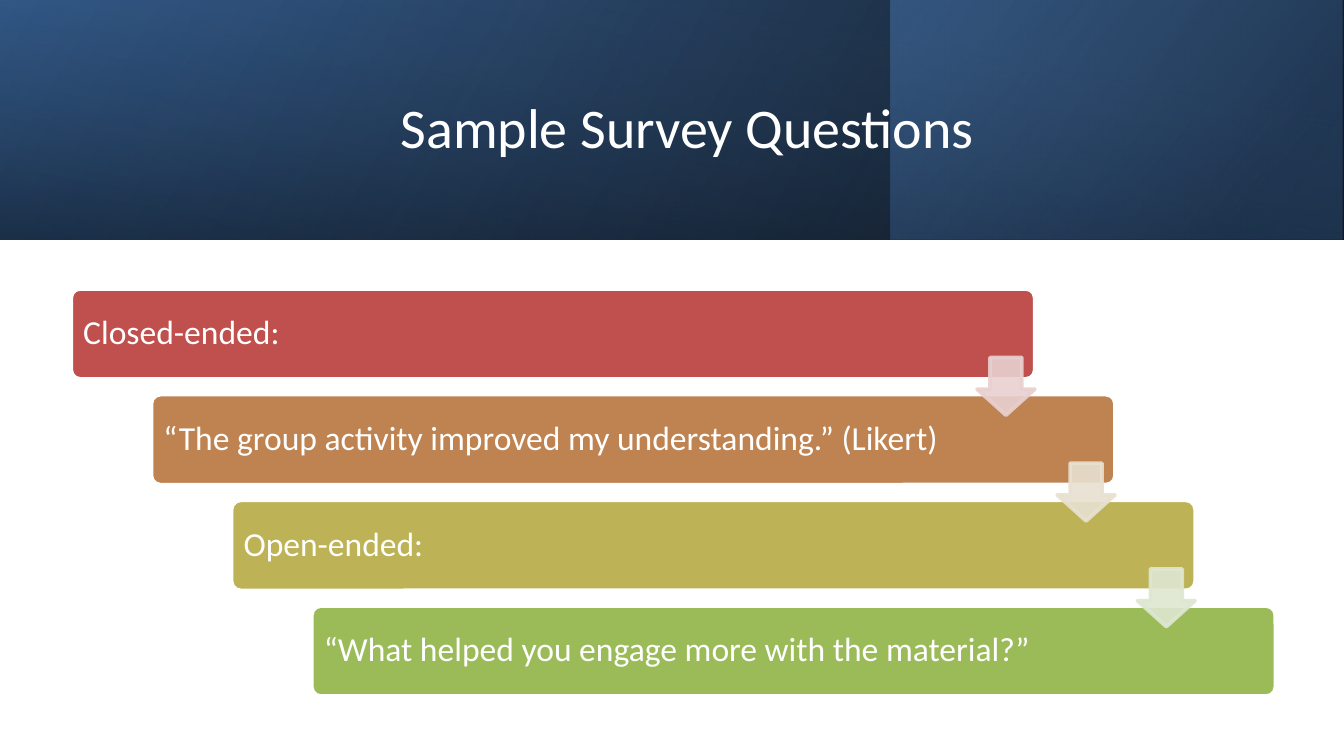
"""Build the survey questions slide: a gradient header above four staggered steps."""
from lxml import etree
from pptx import Presentation
from pptx.dml.color import RGBColor as RGB
from pptx.enum.shapes import MSO_SHAPE as SHAPE
from pptx.enum.text import MSO_ANCHOR as ANCHOR, PP_ALIGN as ALIGN
from pptx.oxml import parse_xml
from pptx.oxml.ns import nsdecls, qn
from pptx.util import Inches, Pt

THEME = {
    "font": "Calibri", "title_size": Pt(30), "step_size": Pt(18), "line": Pt(2),
    "white": "FFFFFF", "black": "000000",
    "navy": "254061", "blue": "376092", "sky": "4F81BD",
    "steps": ["C0504D", "BE8351", "BDB255", "9BBB59"],
    "arrows": ["E8D0D0", "E8E1D1", "DEE7D1"],
}
HEADER = [
    ((0, 0, 10, 1.78), 0, 330, [(0, "black", 96), (100, "blue", 100)]),
    ((6.63, 0, 3.36, 1.78), 0, 320, [(19, "navy", 68), (100, "sky", 48)]),
    ((4.11, -4.11, 1.78, 10), 270, 350, [(23, "blue", 16), (99, "black", 45)]),
]
STEPS = [
    "Closed-ended:",
    "“The group activity improved my understanding.” (Likert)",
    "Open-ended:",
    "“What helped you engage more with the material?”",
]
STEP_X, STEP_Y = 1.79 / 3, 2.36 / 3


def add_shape(kind, box, color, line_color=None):
    sp = s.shapes.add_shape(kind, *map(Inches, box))
    sp.shadow.inherit = False
    sp.fill.solid()
    sp.fill.fore_color.rgb = RGB.from_string(color)
    if line_color:
        sp.line.color.rgb = RGB.from_string(line_color)
        sp.line.width = THEME["line"]
    else:
        sp.line.fill.background()
    return sp


def set_text(sp, text, size, align, inset, spacing):
    tf = sp.text_frame
    tf.text = text
    frame = {"word_wrap": True, "vertical_anchor": ANCHOR.MIDDLE,
             "margin_left": inset, "margin_right": inset}
    for name, value in frame.items():
        setattr(tf, name, value)
    p = tf.paragraphs[0]
    p.alignment, p.line_spacing = align, spacing
    font = p.runs[0].font
    for name, value in {"name": THEME["font"], "size": size}.items():
        setattr(font, name, value)
    font.color.rgb = RGB.from_string(THEME["white"])


prs = Presentation()
prs.slide_width = Inches(10)
prs.slide_height = prs.slide_width * 9 // 16
s = prs.slides.add_slide(prs.slide_layouts[5])

for box, rotation, angle, stops in HEADER:
    sp = add_shape(SHAPE.RECTANGLE, box, THEME["blue"])
    sp.rotation = rotation
    props = sp._element.spPr
    props.find(qn("a:xfrm")).set("flipH", "1")
    gs = "".join(
        f'<a:gs pos="{pos * 1000}"><a:srgbClr val="{THEME[color]}">'
        f'<a:alpha val="{alpha * 1000}"/></a:srgbClr></a:gs>'
        for pos, color, alpha in stops)
    gradient = parse_xml(
        f'<a:gradFill {nsdecls("a")}><a:gsLst>{gs}</a:gsLst>'
        f'<a:lin ang="{angle * 60000}" scaled="0"/></a:gradFill>')
    props.replace(props.find(qn("a:solidFill")), gradient)

title = s.shapes.title
title.left, title.top, title.width, title.height = map(Inches, (1.13, 0.29, 7.97, 1.29))
set_text(title, "Sample Survey Questions", THEME["title_size"], ALIGN.CENTER, Inches(0.1), 1.0)
s.shapes._spTree.append(title._element)

for i, (text, color) in enumerate(zip(STEPS, THEME["steps"])):
    box = (0.53 + i * STEP_X, 2.15 + i * STEP_Y, 7.17, 0.67)
    sp = add_shape(SHAPE.ROUNDED_RECTANGLE, box, color, THEME["white"])
    sp.adjustments[0] = 0.1
    set_text(sp, text, THEME["step_size"], ALIGN.LEFT, Inches(0.07), 0.9)

for i, color in enumerate(THEME["arrows"]):
    box = (7.27 + i * STEP_X, 2.66 + i * STEP_Y, 0.43, 0.43)
    sp = add_shape(SHAPE.DOWN_ARROW, box, color, color)
    sp.adjustments[0], sp.adjustments[1] = 0.55, 0.45
    for rgb in sp._element.spPr.iter(qn("a:srgbClr")):
        etree.SubElement(rgb, qn("a:alpha")).set("val", "90000")

prs.save("out.pptx")
